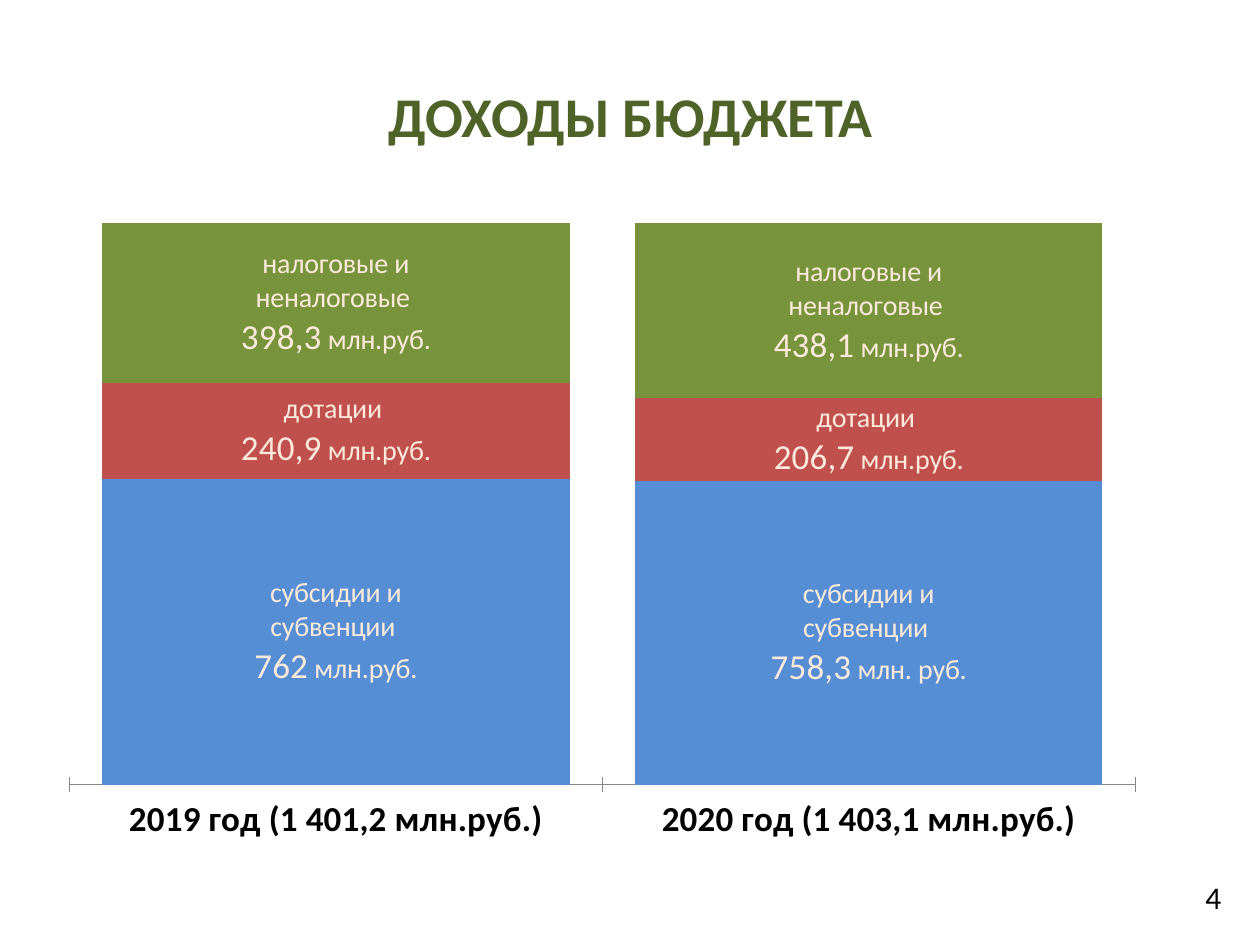
from lxml import etree
from pptx import Presentation
from pptx.chart.data import CategoryChartData
from pptx.dml.color import RGBColor
from pptx.enum.chart import XL_CHART_TYPE as ChartType
from pptx.enum.chart import XL_LABEL_POSITION as LabelPosition
from pptx.enum.chart import XL_TICK_LABEL_POSITION as TickLabels
from pptx.enum.chart import XL_TICK_MARK as TickMark
from pptx.enum.text import MSO_ANCHOR, PP_ALIGN
from pptx.oxml import parse_xml
from pptx.util import Cm, Pt

TITLE = "ДОХОДЫ БЮДЖЕТА"
PAGE_NUMBER = "4"
YEARS = ["2019 год (1 401,2 млн.руб.)", "2020 год (1 403,1 млн.руб.)"]
# name, colour key, then (value, shown number, shown unit) for each year
INCOME = [
    ("субсидии и субвенции", "grants",
     [(762, "762", "млн.руб."), (758.3, "758,3", "млн. руб.")]),
    ("дотации", "subsidies",
     [(240.9, "240,9", "млн.руб."), (206.7, "206,7", "млн.руб.")]),
    ("налоговые и неналоговые", "taxes",
     [(398.3, "398,3", "млн.руб."), (438.1, "438,1", "млн.руб.")]),
]

THEME = {
    "font": "Calibri",
    "colors": {
        "title": "4F6228", "text": "000000", "label": "FDEADA", "axis": "868686",
        "grants": "558ED5", "subsidies": "C0504D", "taxes": "77933C",
    },
    "sizes": {"title": 32, "category": 20, "number": 20, "label": 16, "page": 18,
              "chart": 10},
}
PLOT_AREA = {"x": 0.03, "y": 0.05, "w": 0.93, "h": 0.76}
CHART_NS = "http://schemas.openxmlformats.org/drawingml/2006/chart"


def color(key):
    return RGBColor.from_string(THEME["colors"][key])


def format_font(font, size, color_key="text", bold=False):
    font.name = THEME["font"]
    font.size = Pt(THEME["sizes"][size])
    font.bold = bold
    font.color.rgb = color(color_key)


def add_text(paragraph, text, **style):
    paragraph.alignment = PP_ALIGN.CENTER
    run = paragraph.add_run()
    run.text = text
    format_font(run.font, **style)


def set_plot_layout(chart):
    """Pin the inner plot area to PLOT_AREA, in fractions of the chart."""
    plot_area = chart._chartSpace.chart.plotArea
    for old in plot_area.findall(f"{{{CHART_NS}}}layout"):
        plot_area.remove(old)
    layout = parse_xml(f'<c:layout xmlns:c="{CHART_NS}"><c:manualLayout/></c:layout>')
    settings = {"layoutTarget": "inner", "xMode": "edge", "yMode": "edge", **PLOT_AREA}
    for tag, value in settings.items():
        etree.SubElement(layout[0], f"{{{CHART_NS}}}{tag}").set("val", str(value))
    plot_area.insert(0, layout)


def label_point(point, name, number, unit):
    label = point.data_label
    frame = label.text_frame
    add_text(frame.paragraphs[0], f"{name} ", size="label", color_key="label")
    amount = frame.add_paragraph()
    add_text(amount, number, size="number", color_key="label")
    add_text(amount, f" {unit}", size="label", color_key="label")
    label.position = LabelPosition.CENTER


def add_income_chart(slide):
    data = CategoryChartData(number_format="0.0")
    data.categories = YEARS
    for name, _, entries in INCOME:
        data.add_series(name, [value for value, _, _ in entries])
    chart = slide.shapes.add_chart(
        ChartType.COLUMN_STACKED_100, Cm(0.71), Cm(3.75), Cm(23.1), Cm(14.9), data
    ).chart
    chart.has_legend = False
    chart.has_title = False
    format_font(chart.font, "chart")

    chart.value_axis.visible = False
    chart.value_axis.has_major_gridlines = False
    axis = chart.category_axis
    axis.major_tick_mark = TickMark.CROSS
    axis.tick_label_position = TickLabels.LOW
    axis.format.line.color.rgb = color("axis")
    format_font(axis.tick_labels.font, "category", bold=True)

    plot = chart.plots[0]
    plot.gap_width = 14
    plot.overlap = 100
    plot.vary_by_categories = False
    for series, (name, color_key, entries) in zip(plot.series, INCOME):
        series.format.fill.solid()
        series.format.fill.fore_color.rgb = color(color_key)
        labels = series.data_labels
        labels.show_value = labels.show_series_name = True
        format_font(labels.font, "label", "label", bold=True)
        for index, (_, number, unit) in enumerate(entries):
            label_point(series.points[index], name, number, unit)
    set_plot_layout(chart)


def main():
    presentation = Presentation()
    presentation.slide_width, presentation.slide_height = Cm(25.4), Cm(19.05)
    slide = presentation.slides.add_slide(presentation.slide_layouts[5])

    title = slide.shapes.title
    title.left, title.top, title.width, title.height = Cm(1.92), Cm(1.43), Cm(21.6), Cm(1.78)
    title.text_frame.vertical_anchor = MSO_ANCHOR.MIDDLE
    add_text(title.text_frame.paragraphs[0], TITLE, size="title", color_key="title", bold=True)

    add_income_chart(slide)

    page_box = slide.shapes.add_textbox(Cm(23.57), Cm(17.58), Cm(1.78), Cm(1.02))
    page_box.text_frame.word_wrap = True
    add_text(page_box.text_frame.paragraphs[0], PAGE_NUMBER, size="page")

    presentation.save("out.pptx")


if __name__ == "__main__":
    main()
